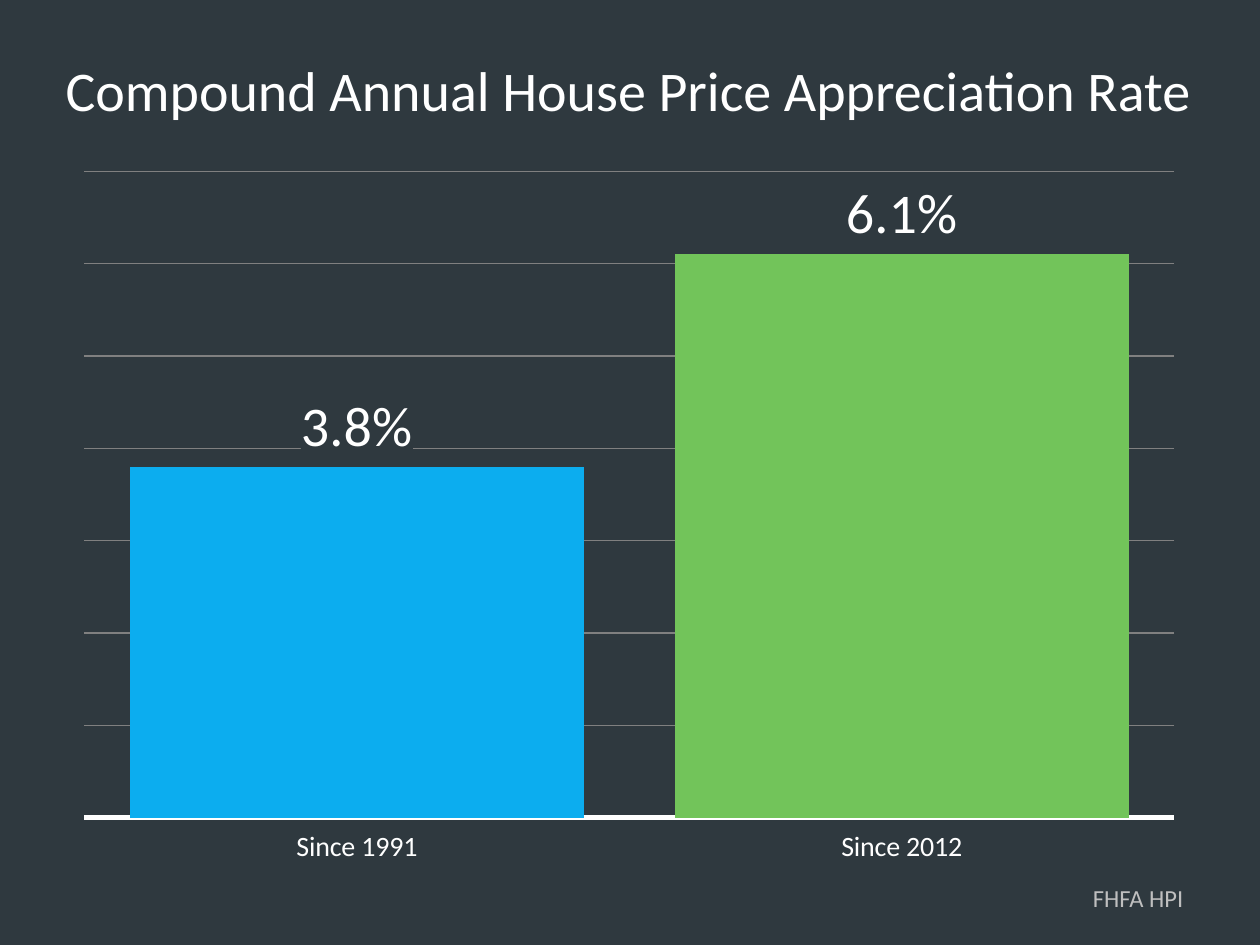
from lxml import etree
from pptx import Presentation
from pptx.chart.data import CategoryChartData
from pptx.dml.color import RGBColor
from pptx.enum.chart import XL_CHART_TYPE, XL_LABEL_POSITION, XL_TICK_LABEL_POSITION, XL_TICK_MARK
from pptx.enum.shapes import MSO_SHAPE
from pptx.enum.text import MSO_ANCHOR, PP_ALIGN
from pptx.oxml import parse_xml
from pptx.oxml.ns import nsdecls, qn
from pptx.util import Inches, Pt

COLUMN = XL_CHART_TYPE.COLUMN_CLUSTERED
OUTSIDE_END = XL_LABEL_POSITION.OUTSIDE_END
NO_TICK = XL_TICK_MARK.NONE
LABELS_LOW = XL_TICK_LABEL_POSITION.LOW
CENTER, RIGHT = PP_ALIGN.CENTER, PP_ALIGN.RIGHT

# Content
TITLE = "Compound Annual House Price Appreciation Rate"
SOURCE = "FHFA HPI"
RATES = [("Since 1991", 0.038, "0CADEF"), ("Since 2012", 0.061, "72C45A")]

# Style and places (left, top, width, height in inches)
FONT = "Calibri"
DARK, WHITE, GRID, MUTED = "2F393F", "FFFFFF", "808080", "BFBFBF"
TITLE_BOX = (-0.01, 0.39, 10, 0.64)
CHART_BOX = (0.48, 1.25, 9.01, 5.66)
PLOT_BOX = (0.67, 1.36, 8.65, 5.13)
SOURCE_BOX = (7.54, 6.96, 1.95, 0.34)


def color(value):
    return RGBColor.from_string(value)


def set_font(font, size, value):
    font.name, font.size, font.bold = FONT, Pt(size), False
    font.color.rgb = color(value)


def write_text(shape, text, *, box, size, fill, align):
    shape.left, shape.top, shape.width, shape.height = map(Inches, box)
    frame = shape.text_frame
    frame.word_wrap = True
    frame.vertical_anchor = MSO_ANCHOR.TOP
    paragraph = frame.paragraphs[0]
    paragraph.alignment = align
    run = paragraph.add_run()
    run.text = text
    set_font(run.font, size, fill)


def place_plot(chart):
    """Fix the inner plot area as fractions of the chart frame."""
    left, top, width, height = CHART_BOX
    fractions = {
        "x": (PLOT_BOX[0] - left) / width,
        "y": (PLOT_BOX[1] - top) / height,
        "w": PLOT_BOX[2] / width,
        "h": PLOT_BOX[3] / height,
    }
    plot_area = chart._chartSpace.chart.plotArea
    for old in plot_area.findall(qn("c:layout")):
        plot_area.remove(old)
    layout = etree.Element(qn("c:layout"))
    manual = etree.SubElement(layout, qn("c:manualLayout"))
    settings = [("layoutTarget", "inner"), ("xMode", "edge"), ("yMode", "edge")]
    settings += [(key, f"{value:.4f}") for key, value in fractions.items()]
    for tag, value in settings:
        etree.SubElement(manual, qn(f"c:{tag}")).set("val", value)
    plot_area.insert(0, layout)


def add_rate_chart(slide):
    data = CategoryChartData(number_format="0.0%")
    data.categories = [name for name, _, _ in RATES]
    data.add_series("Series 1", [rate for _, rate, _ in RATES])
    chart = slide.shapes.add_chart(COLUMN, *map(Inches, CHART_BOX), data).chart
    chart.has_legend = chart.has_title = False
    set_font(chart.font, 10, "000000")
    place_plot(chart)

    # Axes
    categories = chart.category_axis
    categories.major_tick_mark = categories.minor_tick_mark = NO_TICK
    categories.tick_label_position = LABELS_LOW
    set_font(categories.tick_labels.font, 16, WHITE)
    categories.format.line.color.rgb = color(WHITE)
    categories.format.line.width = Pt(3)
    values = chart.value_axis
    values.minimum_scale, values.maximum_scale, values.major_unit = 0, 0.07, 0.01
    values.tick_labels.number_format = "0.0%"
    values.tick_labels.number_format_is_linked = False
    values.major_gridlines.format.line.color.rgb = color(GRID)
    values.major_gridlines.format.line.width = Pt(0.75)
    values.visible = False

    # Columns
    plot = chart.plots[0]
    plot.gap_width, plot.overlap, plot.vary_by_categories = 20, -27, False
    series = plot.series[0]
    series.format.fill.solid()
    series.format.fill.fore_color.rgb = color(RATES[0][2])
    for index, (_, _, fill) in enumerate(RATES):
        point_fill = series.points[index].format.fill
        point_fill.solid()
        point_fill.fore_color.rgb = color(fill)

    # Labels, filled so that gridlines do not cross them
    labels = series.data_labels
    labels.show_value = True
    labels.position = OUTSIDE_END
    labels.number_format, labels.number_format_is_linked = "0.0%", False
    set_font(labels.font, 32, WHITE)
    label_fill = parse_xml(
        f'<c:spPr {nsdecls("c", "a")}><a:solidFill><a:srgbClr val="{DARK}"/></a:solidFill></c:spPr>'
    )
    labels._element.find(qn("c:txPr")).addprevious(label_fill)


def main():
    presentation = Presentation()
    presentation.slide_width, presentation.slide_height = Inches(10), Inches(7.5)
    slide = presentation.slides.add_slide(presentation.slide_layouts[5])
    shapes = slide.shapes

    # Backdrop, sent behind the title
    backdrop = shapes.add_shape(
        MSO_SHAPE.RECTANGLE, 0, 0, presentation.slide_width, presentation.slide_height
    )
    backdrop.shadow.inherit = False
    backdrop.fill.solid()
    backdrop.fill.fore_color.rgb = color(DARK)
    backdrop.line.fill.background()
    shapes.title._element.addprevious(backdrop._element)

    add_rate_chart(slide)
    write_text(shapes.title, TITLE, box=TITLE_BOX, size=32, fill=WHITE, align=CENTER)
    source = shapes.add_textbox(*map(Inches, SOURCE_BOX))
    write_text(source, SOURCE, box=SOURCE_BOX, size=14, fill=MUTED, align=RIGHT)
    presentation.save("out.pptx")


if __name__ == "__main__":
    main()
